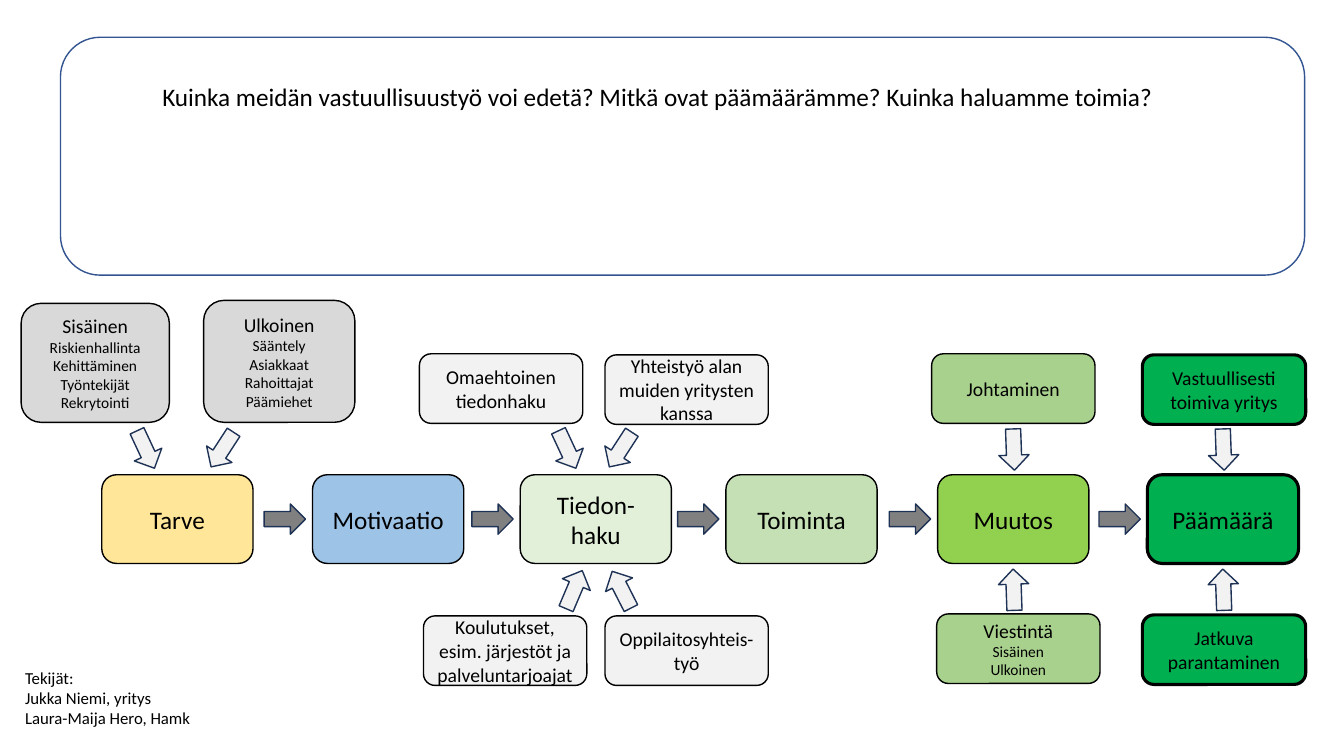
from dataclasses import dataclass

from pptx import Presentation
from pptx.dml.color import RGBColor
from pptx.enum.shapes import MSO_SHAPE as Kind
from pptx.enum.text import MSO_ANCHOR as Anchor, MSO_AUTO_SIZE as Fit, PP_ALIGN as Align
from pptx.util import Inches, Pt


@dataclass(frozen=True)
class Theme:
    font: str = "Calibri"
    ink: str = "000000"
    edge: str = "1E3256"
    frame: str = "325491"
    pale: str = "F2F2F2"
    gray: str = "D9D9D9"
    dark: str = "808080"
    sand: str = "FFE699"
    blue: str = "9DC3E6"
    mint: str = "E2F0D9"
    sage: str = "C5E0B4"
    leaf: str = "A9D18E"
    lime: str = "92D050"
    green: str = "00B050"
    big: float = 18
    mid: float = 14
    note: float = 12
    small: float = 11
    thin: float = 1
    thick: float = 2.25


@dataclass(frozen=True)
class Step:
    left: float
    text: str
    fill: str
    line: float = 1


@dataclass(frozen=True)
class Card:
    left: float
    top: float
    text: str
    fill: str
    items: tuple[str, ...] = ()
    width: float = 1.62
    height: float = 0.69
    line: float = 1


@dataclass(frozen=True)
class Arrow:
    left: float
    top: float
    turn: float = 0
    fill: str = "F2F2F2"


T = Theme()
STEP_TOP, STEP_W, STEP_H = 4.71, 1.5, 0.88
ARROW_W, ARROW_H = 0.41, 0.3
LEAD = 0.48  # arrow start ahead of the next step

STEPS = [
    Step(1.01, "Tarve", T.sand),
    Step(3.1, "Motivaatio", T.blue),
    Step(5.16, "Tiedon-\nhaku", T.mint),
    Step(7.2, "Toiminta", T.sage),
    Step(9.3, "Muutos", T.lime),
    Step(11.38, "Päämäärä", T.green, T.thick),
]

CARDS = [
    Card(0.21, 3.01, "Sisäinen", T.gray,
         ("Riskienhallinta", "Kehittäminen", "Työntekijät", "Rekrytointi"), 1.47, 1.18),
    Card(2.02, 2.98, "Ulkoinen", T.gray,
         ("Sääntely", "Asiakkaat", "Rahoittajat", "Päämiehet"), 1.5, 1.21),
    Card(4.16, 3.51, "Omaehtoinen tiedonhaku", T.pale),
    Card(6, 3.52, "Yhteistyö alan muiden yritysten kanssa", T.pale),
    Card(4.2, 6.11, "Koulutukset, esim. järjestöt ja palveluntarjoajat", T.pale),
    Card(6, 6.11, "Oppilaitosyhteis-\ntyö", T.pale),
    Card(9.24, 3.51, "Johtaminen", T.leaf),
    Card(9.29, 6.09, "Viestintä", T.leaf, ("Sisäinen", "Ulkoinen")),
    Card(11.33, 3.52, "Vastuullisesti toimiva yritys", T.green, line=T.thick),
    Card(11.33, 6.1, "Jatkuva parantaminen", T.green, line=T.thick),
]

UPPER, LOWER = 4.31, 5.7
ARROWS = [
    Arrow(1.24, UPPER, 65), Arrow(2, UPPER, 123),
    Arrow(5.42, UPPER, 65), Arrow(5.95, UPPER, 123),
    Arrow(5.49, LOWER, 293), Arrow(5.96, LOWER, 243),
    Arrow(9.85, UPPER, 88), Arrow(9.85, LOWER, 268),
    Arrow(11.93, UPPER, 88), Arrow(11.93, LOWER, 268),
] + [Arrow(step.left - LEAD, 5, fill=T.dark) for step in STEPS[1:]]


def write(frame, lines: list[tuple[str, float]], align: Align, anchor: Anchor) -> None:
    frame.word_wrap = True
    frame.vertical_anchor = anchor
    for i, (text, size) in enumerate(lines):
        para = frame.paragraphs[0] if i == 0 else frame.add_paragraph()
        para.alignment = align
        run = para.add_run()
        run.text = text
        run.font.name = T.font
        run.font.size = Pt(size)
        run.font.color.rgb = RGBColor.from_string(T.ink)


def draw(slide, kind: Kind, box: tuple, fill: str | None, edge: str, line: float = 1):
    shape = slide.shapes.add_shape(kind, *map(Inches, box))
    shape.shadow.inherit = False
    if fill:
        shape.fill.solid()
        shape.fill.fore_color.rgb = RGBColor.from_string(fill)
    else:
        shape.fill.background()
    shape.line.color.rgb = RGBColor.from_string(edge)
    shape.line.width = Pt(line)
    return shape


def add_step(slide, step: Step) -> None:
    box = (step.left, STEP_TOP, STEP_W, STEP_H)
    shape = draw(slide, Kind.ROUNDED_RECTANGLE, box, step.fill, T.ink, step.line)
    lines = [(text, T.big) for text in step.text.split("\n")]
    write(shape.text_frame, lines, Align.CENTER, Anchor.MIDDLE)


def add_card(slide, card: Card) -> None:
    box = (card.left, card.top, card.width, card.height)
    shape = draw(slide, Kind.ROUNDED_RECTANGLE, box, card.fill, T.ink, card.line)
    lines = [(text, T.mid) for text in card.text.split("\n")]
    lines += [(text, T.small) for text in card.items]
    write(shape.text_frame, lines, Align.CENTER, Anchor.MIDDLE)


def add_arrow(slide, arrow: Arrow) -> None:
    box = (arrow.left, arrow.top, ARROW_W, ARROW_H)
    shape = draw(slide, Kind.RIGHT_ARROW, box, arrow.fill, T.edge)
    shape.rotation = arrow.turn


def main() -> None:
    deck = Presentation()
    deck.slide_width, deck.slide_height = Inches(13.33), Inches(7.5)
    slide = deck.slides.add_slide(deck.slide_layouts[5])

    # Question and its frame
    draw(slide, Kind.ROUNDED_RECTANGLE, (0.6, 0.37, 12.34, 2.36), None, T.frame)
    title = slide.shapes.title
    title.left, title.top = Inches(1.51), Inches(0.76)
    title.width, title.height = Inches(10.63), Inches(0.4)
    title.text_frame.auto_size = Fit.NONE
    ask = ("Kuinka meidän vastuullisuustyö voi edetä? "
           "Mitkä ovat päämäärämme? Kuinka haluamme toimia?")
    write(title.text_frame, [(ask, T.big)], Align.LEFT, Anchor.TOP)

    # Path from need to goal
    for step in STEPS:
        add_step(slide, step)
    for card in CARDS:
        add_card(slide, card)
    for arrow in ARROWS:
        add_arrow(slide, arrow)

    # Authors
    box = slide.shapes.add_textbox(Inches(0.15), Inches(6.57), Inches(3.43), Inches(0.71))
    names = ["Tekijät:", "Jukka Niemi, yritys", "Laura-Maija Hero, Hamk"]
    write(box.text_frame, [(name, T.note) for name in names], Align.LEFT, Anchor.TOP)

    deck.save("out.pptx")


if __name__ == "__main__":
    main()
